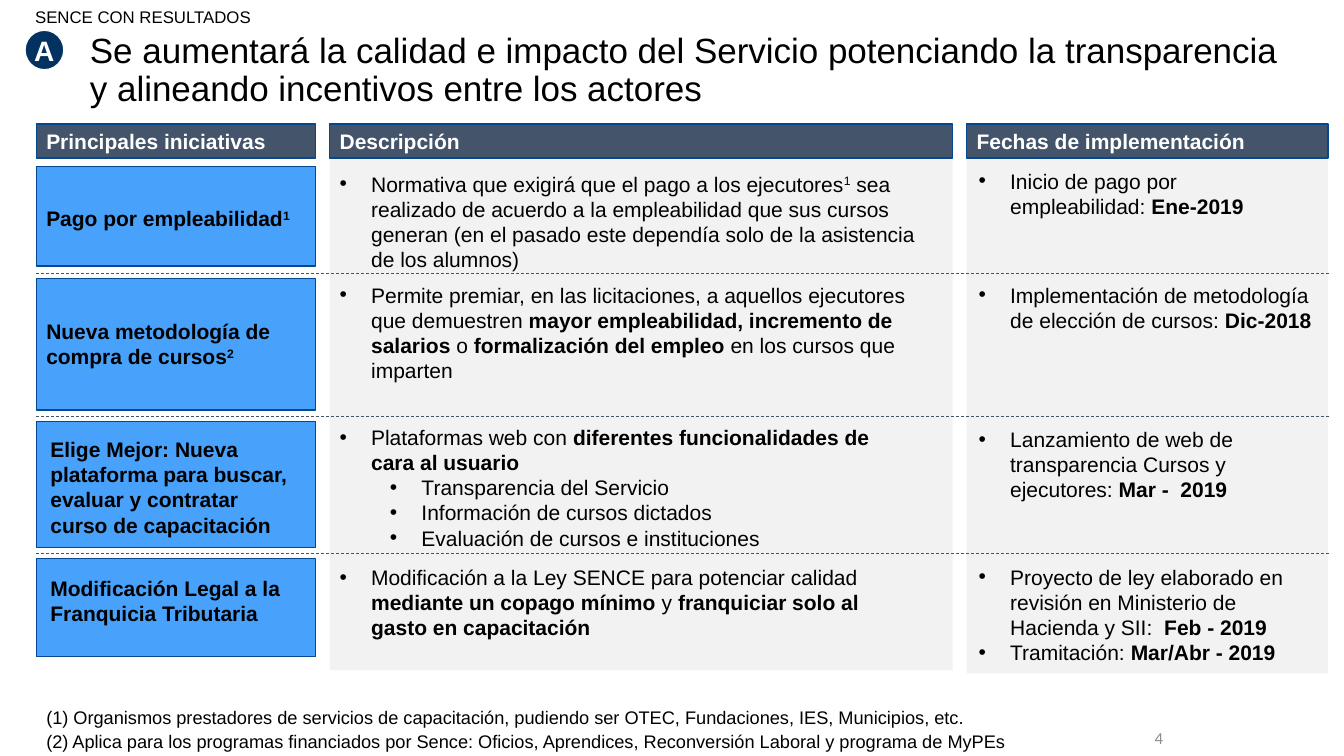
from dataclasses import dataclass

from pptx import Presentation
from pptx.dml.color import RGBColor as RGB
from pptx.enum.dml import MSO_LINE as Dash
from pptx.enum.shapes import MSO_CONNECTOR as Link, MSO_SHAPE as Kind
from pptx.enum.text import MSO_ANCHOR as Anchor, PP_ALIGN as Align
from pptx.oxml.ns import qn
from pptx.util import Pt
from lxml.etree import SubElement as Sub

BLACK = RGB(0, 0, 0)
WHITE = RGB(0xFF, 0xFF, 0xFF)
SLATE = RGB(0x44, 0x54, 0x6A)
NAVY = RGB(0x03, 0x31, 0x60)
EDGE = RGB(0x04, 0x49, 0x8F)
SKY = RGB(0x48, 0xA1, 0xFA)
PALE = RGB(0xF2, 0xF2, 0xF2)
GREY = RGB(0x8C, 0x8C, 0x8C)

BODY = {"name": "Arial", "size": Pt(15), "bold": False}
HEAD = BODY | {"bold": True}
LEFT, RIGHT = 26, 949
HEAD_TOP, HEAD_H, PANE_TOP = 88.5, 24.5, 101.5
HANG, STEP = 22.5, 36


@dataclass
class Column:
    name: str
    left: float
    width: float
    pane: float = 0


@dataclass
class Cell:
    top: float
    width: float
    lines: int
    paras: list[str]


@dataclass
class Row:
    top: float
    height: float
    label: str
    inset: tuple[float, float, float]
    about: Cell
    date: Cell


COLS = [
    Column("Principales iniciativas", LEFT, 199.5),
    Column("Descripción", 235.5, 445, 377.25),
    Column("Fechas de implementación", 690.5, 258, 379.5),
]

# In texts, * switches bold, ^ switches superscript, a leading > marks level two.
ROWS = [
    Row(118.75, 71.25, "Pago por empleabilidad^1", (7.2, 28, 7.2),
        Cell(118.75, 445, 4, [
            "Normativa que exigirá que el pago a los ejecutores^1^ sea realizado "
            "de acuerdo a la empleabilidad que sus cursos generan (en el pasado "
            "este dependía solo de la asistencia de los alumnos)"]),
        Cell(116.5, 252, 2, ["Inicio de pago por empleabilidad: *Ene-2019"])),
    Row(198.75, 94.25, "Nueva metodología de compra de cursos^2", (7.2, 28.75, 7.2),
        Cell(198, 445, 4, [
            "Permite premiar, en las licitaciones, a aquellos ejecutores que "
            "demuestren *mayor empleabilidad, incremento de salarios *o "
            "*formalización del empleo *en los cursos que imparten"]),
        Cell(198, 252, 3, [
            "Implementación de metodología de elección de cursos: *Dic-2018"])),
    Row(301, 90, "Elige Mejor: Nueva plataforma para buscar, evaluar y "
        "contratar curso de capacitación", (10, 10.75, 17),
        Cell(299.5, 423.5, 5, [
            "Plataformas web con *diferentes funcionalidades de cara al usuario",
            ">Transparencia del Servicio",
            ">Información de cursos dictados",
            ">Evaluación de cursos e instituciones"]),
        Cell(301, 252, 3, [
            "Lanzamiento de web de transparencia Cursos y ejecutores: "
            "*Mar -  2019"])),
    Row(399, 70, "Modificación Legal a la Franquicia Tributaria", (10, 12.25, 12),
        Cell(399.5, 417, 3, [
            "Modificación a la Ley SENCE para potenciar calidad *mediante un "
            "copago mínimo *y *franquiciar solo al gasto en capacitación"]),
        Cell(399.5, 256.25, 4, [
            "Proyecto de ley elaborado en revisión en Ministerio de Hacienda y "
            "SII:  *Feb - 2019",
            "Tramitación:* Mar/Abr - 2019"])),
]
RULES = [195, 297.5, 395.25]
NOTES = [
    (501, "(1) Organismos prestadores de servicios de capacitación, pudiendo ser "
          "OTEC, Fundaciones, IES, Municipios, etc."),
    (517.75, "(2) Aplica para los programas financiados por Sence: Oficios, "
             "Aprendices, Reconversión Laboral y programa de MyPEs"),
]


def style(item, form: dict) -> None:
    """Set each value of form as an attribute of item."""
    for key, val in form.items():
        setattr(item, key, val)


def write(para, text: str, font: dict, color: RGB = BLACK) -> None:
    """Add runs, reading the * and ^ switches."""
    for i, part in enumerate(text.split("*")):
        for j, bit in enumerate(part.split("^")):
            if not bit:
                continue
            run = para.add_run()
            run.text = bit
            style(run.font, font | {"bold": font["bold"] or i % 2 == 1})
            run.font.color.rgb = color
            if j % 2:
                run.font._element.set("baseline", "30000") if hasattr(
                    run.font, "_element") else run._r.get_or_add_rPr().set(
                    "baseline", "30000")


def bullet(para, level: int) -> None:
    props = para._p.get_or_add_pPr()
    props.set("marL", str(Pt(HANG + STEP * level)))
    props.set("indent", str(-Pt(HANG)))
    Sub(props, qn("a:buFont"), typeface="Arial")
    Sub(props, qn("a:buChar"), char="•")


def block(slide, kind: Kind, area: tuple, fill: RGB, edge: RGB | None = None,
          thick: float = 1):
    shape = slide.shapes.add_shape(kind, *map(Pt, area))
    shape.shadow.inherit = False
    shape.fill.solid()
    shape.fill.fore_color.rgb = fill
    if edge is None:
        shape.line.fill.background()
    else:
        shape.line.color.rgb = edge
        shape.line.width = Pt(thick)
    return shape


def label(shape, text: str, font: dict, color: RGB = BLACK,
          align: Align = Align.LEFT, **form) -> None:
    """Write one paragraph in a shape, with the frame set from form."""
    frame = shape.text_frame
    style(frame, {"word_wrap": True, "vertical_anchor": Anchor.TOP} | form)
    frame.paragraphs[0].alignment = align
    write(frame.paragraphs[0], text, font, color)


def box(slide, *area: float):
    return slide.shapes.add_textbox(*map(Pt, area))


def listing(slide, left: float, cell: Cell) -> None:
    frame = box(slide, left, cell.top, cell.width, 18 * cell.lines + 8).text_frame
    frame.word_wrap = True
    for i, text in enumerate(cell.paras):
        para = frame.add_paragraph() if i else frame.paragraphs[0]
        para.level = int(text.startswith(">"))
        bullet(para, para.level)
        write(para, text.lstrip(">"), BODY)


def rule(slide, top: float) -> None:
    line = slide.shapes.add_connector(
        Link.STRAIGHT, Pt(LEFT), Pt(top), Pt(RIGHT), Pt(top))
    line.line.color.rgb = SLATE
    style(line.line, {"width": Pt(0.5), "dash_style": Dash.DASH})
    Sub(line._element.spPr, qn("a:effectLst"))


def main() -> None:
    deck = Presentation()
    style(deck, {"slide_width": Pt(960), "slide_height": Pt(540)})
    slide = deck.slides.add_slide(deck.slide_layouts[5])

    title = slide.shapes.title
    style(title, {"left": Pt(57), "top": Pt(20.25),
                  "width": Pt(862.5), "height": Pt(61.25)})
    label(title, "Se aumentará la calidad e impacto del Servicio potenciando la "
          "transparencia y alineando incentivos entre los actores",
          BODY | {"size": Pt(25)})
    title.text_frame.paragraphs[0].line_spacing = 0.9
    label(box(slide, 18, 1.5, 170, 21.5), "SENCE CON RESULTADOS",
          BODY | {"size": Pt(12)}, word_wrap=False)
    badge = block(slide, Kind.OVAL, (18, 21.75, 27.5, 28), NAVY, WHITE, 0.75)
    label(badge, "A", HEAD | {"size": Pt(20)}, WHITE, Align.CENTER,
          word_wrap=False, vertical_anchor=Anchor.MIDDLE, margin_left=0,
          margin_top=0, margin_right=0, margin_bottom=0)

    for col in COLS:
        if col.pane:
            block(slide, Kind.RECTANGLE,
                  (col.left, PANE_TOP, col.width, col.pane), PALE)
        head = block(slide, Kind.RECTANGLE,
                     (col.left, HEAD_TOP, col.width, HEAD_H), SLATE, EDGE)
        label(head, col.name, HEAD, WHITE, vertical_anchor=Anchor.MIDDLE)

    first, about, date = COLS
    for row in ROWS:
        card = block(slide, Kind.RECTANGLE,
                     (first.left, row.top, first.width, row.height), SKY, EDGE)
        left, top, right = map(Pt, row.inset)
        label(card, row.label, HEAD, margin_left=left, margin_top=top,
              margin_right=right)
        listing(slide, about.left, row.about)
        listing(slide, date.left + 1.5, row.date)
    for top in RULES:
        rule(slide, top)

    for top, text in NOTES:
        label(box(slide, LEFT, top, 706, 23), text, BODY | {"size": Pt(13)},
              word_wrap=False)
    label(box(slide, 622, 512.5, 216, 28.75), "4",
          BODY | {"name": "Calibri", "size": Pt(12)}, GREY, Align.RIGHT,
          vertical_anchor=Anchor.MIDDLE)
    deck.save("out.pptx")


if __name__ == "__main__":
    main()
